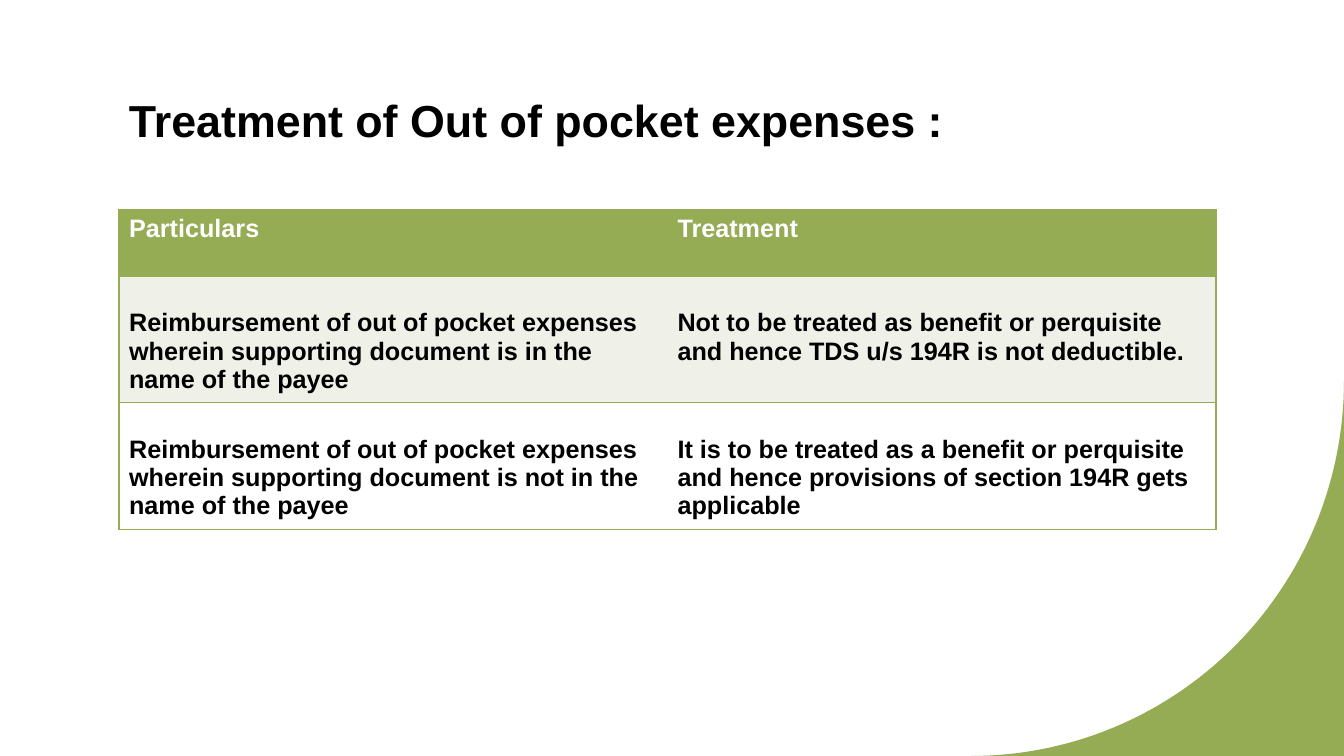
from math import cos, pi, sin

from lxml.etree import SubElement
from pptx import Presentation
from pptx.dml.color import RGBColor
from pptx.enum.text import MSO_ANCHOR
from pptx.oxml.ns import qn
from pptx.util import Pt

GREEN = "95AB54"
PALE = "EFF1E9"
WHITE = "FFFFFF"
BLACK = "000000"
ROWS = [
    ("Particulars", "Treatment"),
    ("Reimbursement of out of pocket expenses wherein supporting document "
     "is in the name of the payee",
     "Not to be treated as benefit or perquisite and hence TDS u/s 194R "
     "is not deductible."),
    ("Reimbursement of out of pocket expenses wherein supporting document "
     "is not in the name of the payee",
     "It is to be treated as a benefit or perquisite and hence provisions "
     "of section 194R gets applicable"),
]
LOOKS = [(66, 5, GREEN, WHITE), (123, 33, PALE, BLACK), (123, 33, WHITE, BLACK)]


def px(n):
    """Turn pixels into EMU."""
    return round(n * 914400 / 100.8)


def color(code):
    """Turn a hex string into a colour."""
    return RGBColor.from_string(code)


def style(frame, size, code):
    """Format every run of a text frame."""
    for para in frame.paragraphs:
        for run in para.runs:
            run.font.name = "Arial"
            run.font.size = Pt(size)
            run.font.bold = True
            run.font.color.rgb = color(code)


def border(cell, sides):
    """Draw green lines on the named sides of a cell and none elsewhere."""
    props = cell._tc.get_or_add_tcPr()
    for spot, side in enumerate("LRTB"):
        line = SubElement(props, qn(f"a:ln{side}"), w=str(Pt(1)))
        if side in sides:
            fill = SubElement(line, qn("a:solidFill"))
            SubElement(fill, qn("a:srgbClr"), val=GREEN)
        else:
            SubElement(line, qn("a:noFill"))
        props.insert(spot, line)


def add_corner(slide, x, y, w, h):
    """Fill the part of a box that lies outside its quarter circle."""
    steps = 60
    turns = [pi / 2 * i / steps for i in range(steps + 1)]
    arc = [(px(x + w * cos(t)), px(y + h * sin(t))) for t in turns]
    pen = slide.shapes.build_freeform(*arc[0])
    pen.add_line_segments(arc[1:] + [(px(x + w), px(y + h))], close=True)
    shape = pen.convert_to_shape()
    shape.shadow.inherit = False
    shape.fill.solid()
    shape.fill.fore_color.rgb = color(GREEN)
    shape.line.fill.background()


def add_title(slide, x, y, w, h):
    """Place the heading at the bottom of its box."""
    frame = slide.shapes.add_textbox(px(x), px(y), px(w), px(h)).text_frame
    frame.word_wrap = True
    frame.vertical_anchor = MSO_ANCHOR.BOTTOM
    frame.text = "Treatment of Out of pocket expenses :"
    frame.paragraphs[0].line_spacing = 1.1
    style(frame, 32, BLACK)


def add_grid(slide, x, y, w, h):
    """Place the table of expenses and their treatment."""
    table = slide.shapes.add_table(
        len(ROWS), 2, px(x), px(y), px(w), px(h)).table
    for row, texts, look in zip(table.rows, ROWS, LOOKS):
        high, top, back, ink = look
        row.height = px(high)
        for cell, text, edge in zip(row.cells, texts, "LR"):
            cell.text_frame.text = text
            cell.margin_top = px(top)
            cell.margin_bottom = px(3)
            style(cell.text_frame, 18, ink)
            cell.fill.solid()
            cell.fill.fore_color.rgb = color(back)
            border(cell, edge + "TB")


def main():
    """Build the slide and save it."""
    deck = Presentation()
    deck.slide_width, deck.slide_height = px(1344), px(756)
    slide = deck.slides.add_slide(deck.slide_layouts[6])
    add_corner(slide, 971, 381, 373, 375)
    add_title(slide, 119, 46, 1097, 105)
    add_grid(slide, 119, 210, 1097, sum(look[0] for look in LOOKS))
    deck.save("out.pptx")


if __name__ == "__main__":
    main()
